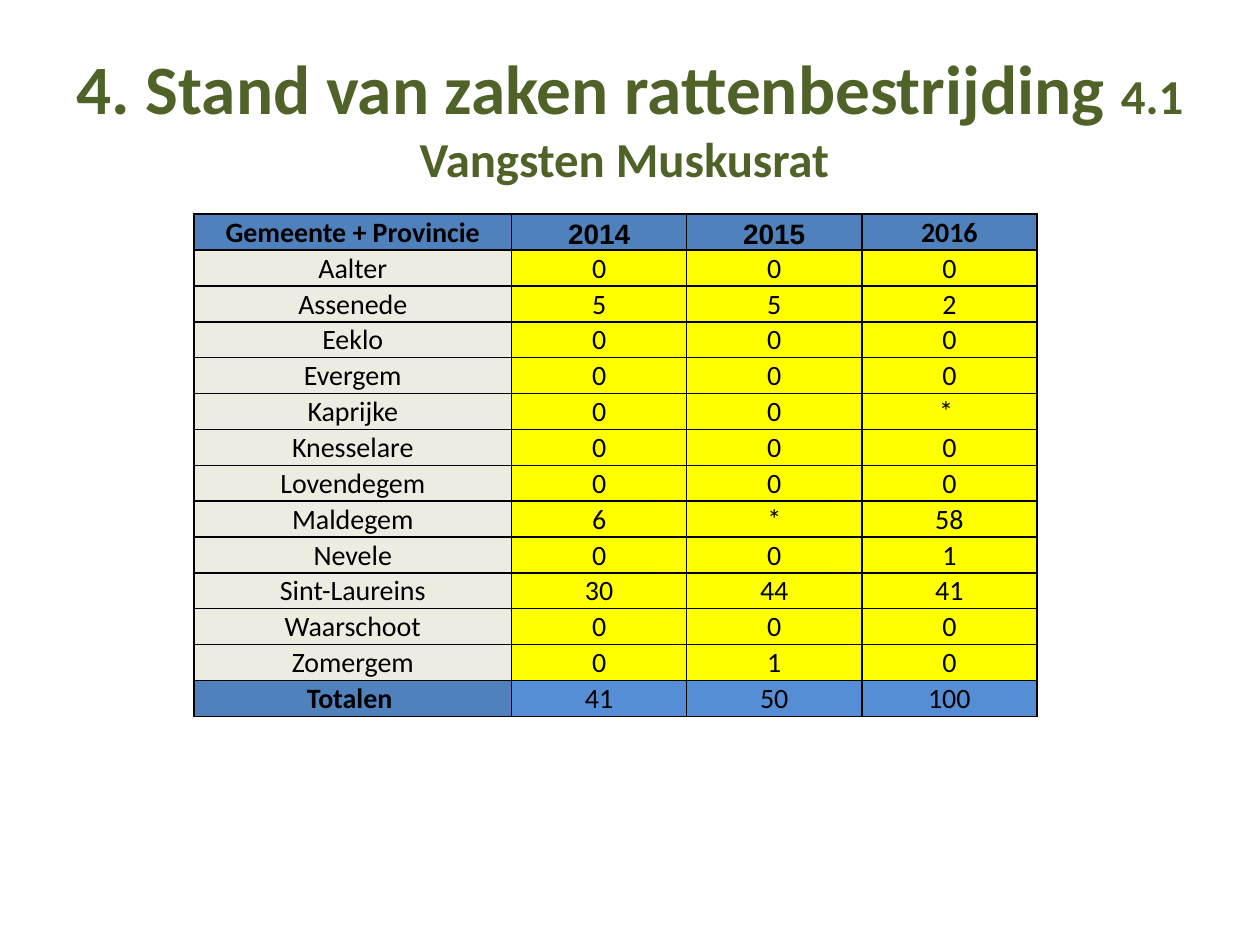
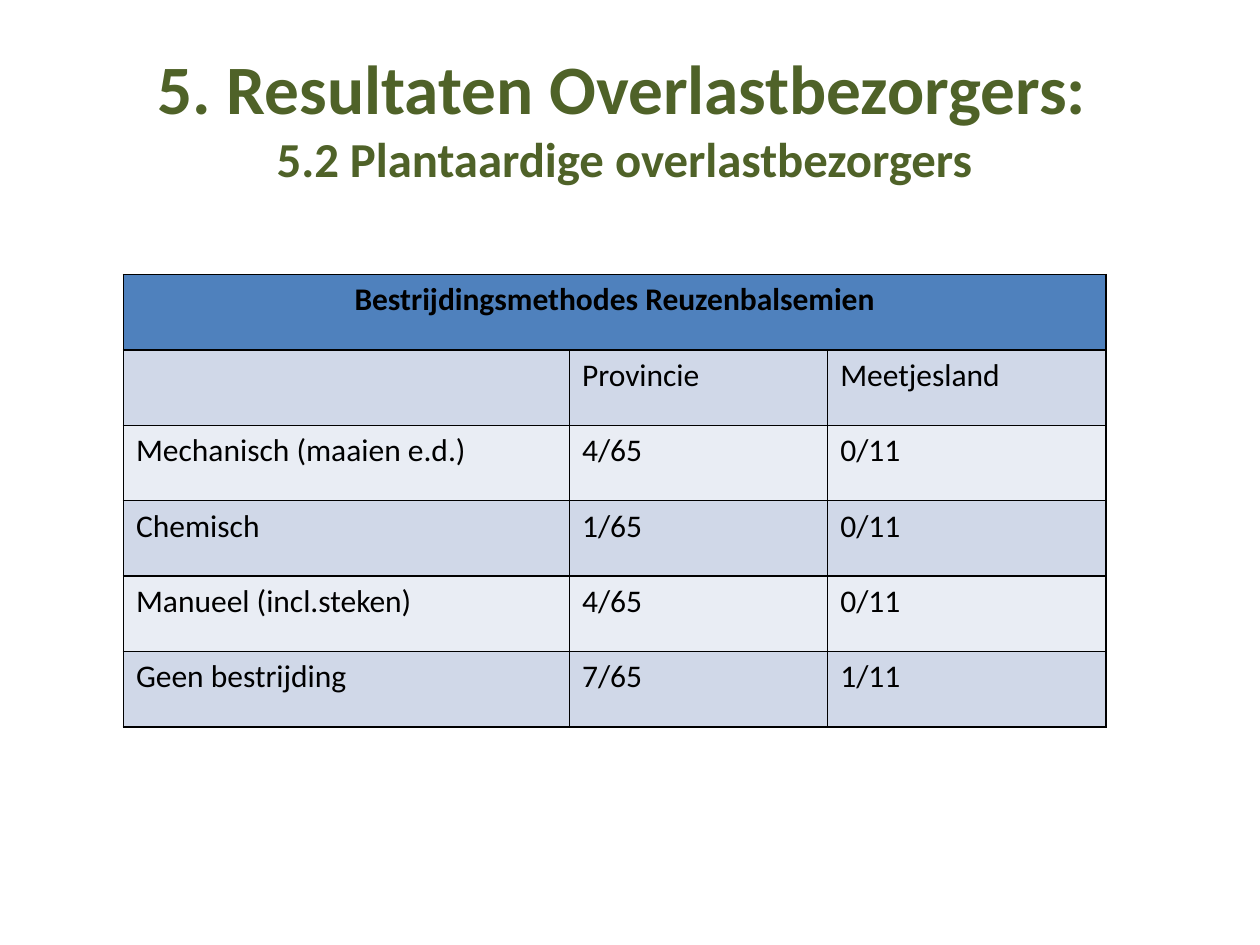
from lxml.etree import SubElement
from pptx import Presentation
from pptx.dml.color import RGBColor
from pptx.enum.text import MSO_ANCHOR, MSO_AUTO_SIZE, PP_ALIGN
from pptx.oxml.ns import qn
from pptx.util import Inches, Pt

# Shared style
GREEN = RGBColor(0x4F, 0x62, 0x28)
BLACK = RGBColor(0x00, 0x00, 0x00)
BLUE = RGBColor(0x4F, 0x81, 0xBD)
SKY = RGBColor(0x55, 0x8E, 0xD5)
CREAM = RGBColor(0xEE, 0xEC, 0xE1)
YELLOW = RGBColor(0xFF, 0xFF, 0x00)
MIST = RGBColor(0xD0, 0xD8, 0xE8)
PALE = RGBColor(0xE9, 0xED, 0xF4)
FONT = "Calibri"

# Muskrat catches per town: 2014, 2015, 2016
CATCH = [
    ("Gemeente + Provincie", "2014", "2015", "2016"),
    ("Aalter", "0", "0", "0"),
    ("Assenede", "5", "5", "2"),
    ("Eeklo", "0", "0", "0"),
    ("Evergem", "0", "0", "0"),
    ("Kaprijke", "0", "0", "* "),
    ("Knesselare", "0", "0", "0"),
    ("Lovendegem", "0", "0", "0"),
    ("Maldegem", "6", "*", "58"),
    ("Nevele", "0", "0", "1"),
    ("Sint-Laureins", "30", "44", "41"),
    ("Waarschoot", "0", "0", "0"),
    ("Zomergem", "0", "1", "0"),
    ("Totalen ", "41", "50", "100"),
]

# Control methods: province, region
METHODS = [
    ("Bestrijdingsmethodes Reuzenbalsemien", "", ""),
    ("", "Provincie", "Meetjesland"),
    ("Mechanisch (maaien e.d.)", "4/65", "0/11"),
    ("Chemisch", "1/65", "0/11"),
    ("Manueel (incl.steken)", "4/65", "0/11"),
    ("Geen bestrijding", "7/65", "1/11"),
]


class Deck:
    def __init__(self):
        self.prs = Presentation()
        self.prs.slide_width = Inches(10)
        self.prs.slide_height = Inches(7.5)
        self.slide = None

    def add_run(self, para, text, size, color=BLACK, bold=False, font=FONT):
        run = para.add_run()
        run.text = text
        run.font.name = font
        run.font.size = Pt(size)
        run.font.bold = bold
        run.font.color.rgb = color

    def add_slide(self, head, sub, split=False):
        """Start a slide; split puts the subtitle on its own line."""
        self.slide = self.prs.slides.add_slide(self.prs.slide_layouts[5])
        title = self.slide.shapes.title
        title.left, title.top = Inches(0.5), Inches(0.3)
        title.width, title.height = Inches(9), Inches(1.25)
        frame = title.text_frame
        frame.word_wrap = True
        frame.auto_size = MSO_AUTO_SIZE.NONE
        frame.vertical_anchor = MSO_ANCHOR.MIDDLE
        para = frame.paragraphs[0]
        para.alignment = PP_ALIGN.CENTER
        self.add_run(para, head, 39.6, GREEN, True)
        if split:
            para.add_line_break()
        self.add_run(para, sub, 27.9, GREEN, True)

    def add_table(self, rows, left, top, widths, height):
        frame = self.slide.shapes.add_table(
            len(rows), len(widths), Inches(left), Inches(top),
            Inches(sum(widths)), Inches(height))
        table = frame.table
        table.first_row = table.horz_banding = False
        for col, width in zip(table.columns, widths):
            col.width = Inches(width)
        for row in table.rows:
            row.height = Inches(height / len(rows))
        return table

    def set_cell(self, cell, text, fill, size, bold=False, font=FONT,
                 align=PP_ALIGN.LEFT):
        self.add_border(cell)
        cell.fill.solid()
        cell.fill.fore_color.rgb = fill
        para = cell.text_frame.paragraphs[0]
        para.alignment = align
        if text:
            self.add_run(para, text, size, BLACK, bold, font)

    def add_border(self, cell):
        props = cell._tc.get_or_add_tcPr()
        for side in ("a:lnL", "a:lnR", "a:lnT", "a:lnB"):
            line = SubElement(props, qn(side), w=str(Pt(1)))
            fill = SubElement(line, qn("a:solidFill"))
            SubElement(fill, qn("a:srgbClr"), val=str(BLACK))


def add_catch(deck):
    deck.add_slide("4. Stand van zaken rattenbestrijding ",
                   "4.1 Vangsten Muskusrat ")
    table = deck.add_table(CATCH, 1.54, 1.7, [2.52] + [1.39] * 3, 3.99)
    last = len(CATCH) - 1
    for r, row in enumerate(CATCH):
        for c, text in enumerate(row):
            # Blue head and total rows, cream names, yellow counts
            edge = r in (0, last)
            if edge:
                fill = SKY if r == last and c else BLUE
            else:
                fill = YELLOW if c else CREAM
            bold = r == 0 or (r == last and c == 0)
            font = "Arial" if r == 0 and c in (1, 2) else FONT
            cell = table.cell(r, c)
            cell.margin_left = cell.margin_right = Inches(0.01)
            cell.margin_top, cell.margin_bottom = Inches(0.01), 0
            cell.vertical_anchor = (
                MSO_ANCHOR.BOTTOM if edge else MSO_ANCHOR.MIDDLE)
            deck.set_cell(cell, text, fill, 16, bold, font, PP_ALIGN.CENTER)


def add_methods(deck):
    deck.add_slide("5. Resultaten Overlastbezorgers: ",
                   "5.2 Plantaardige overlastbezorgers ", split=True)
    table = deck.add_table(METHODS, 0.98, 2.18, [3.54, 2.05, 2.21], 3.59)
    table.cell(0, 0).merge(table.cell(0, 2))
    for r, row in enumerate(METHODS):
        # Blue head row, then alternating bands
        head = r == 0
        fill = BLUE if head else (PALE, MIST)[r % 2]
        align = PP_ALIGN.CENTER if head else PP_ALIGN.LEFT
        for c, text in enumerate(row):
            deck.set_cell(table.cell(r, c), text, fill, 18, head, align=align)


def main():
    deck = Deck()
    add_catch(deck)
    add_methods(deck)
    deck.prs.save("out.pptx")


if __name__ == "__main__":
    main()
